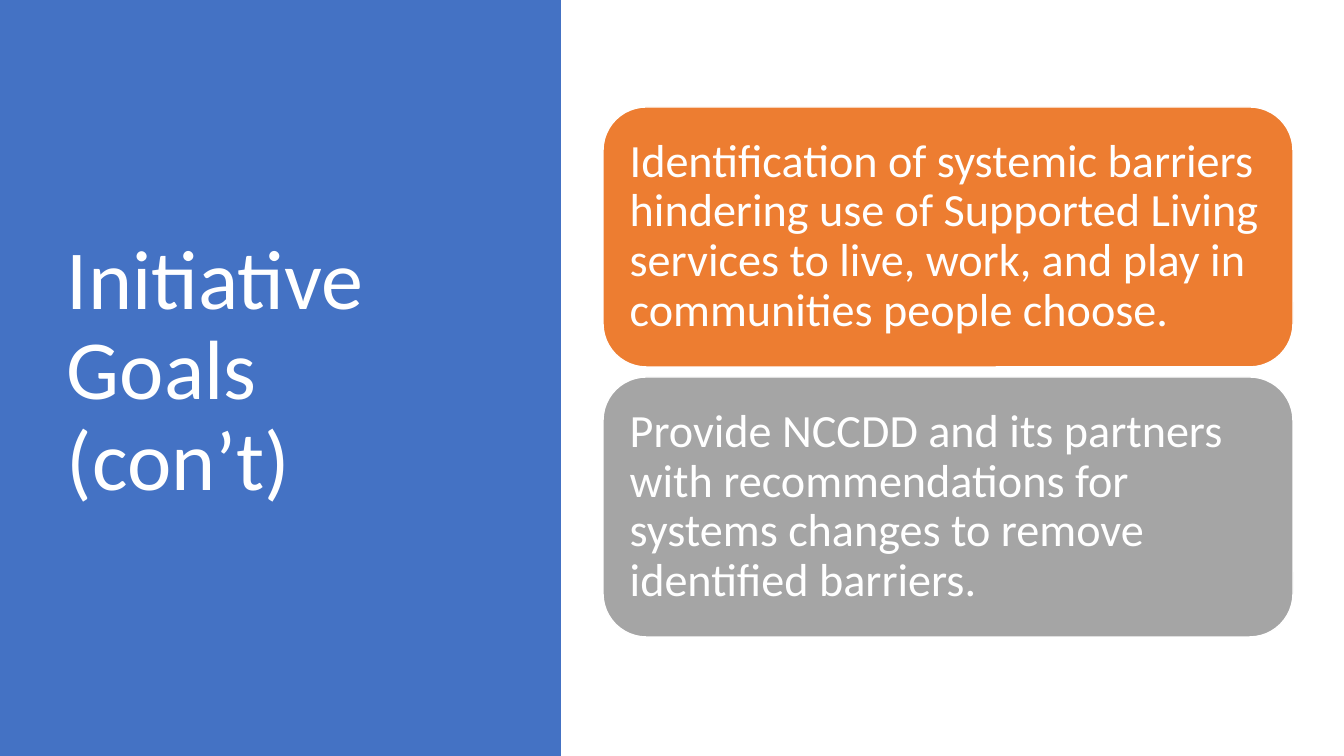
"""Build the Initiative Goals slide: a blue title panel beside two stacked goal cards."""
from pptx import Presentation
from pptx.dml.color import RGBColor
from pptx.enum.shapes import MSO_SHAPE
from pptx.enum.text import MSO_ANCHOR, PP_ALIGN
from pptx.util import Pt

RECT, ROUND = MSO_SHAPE.RECTANGLE, MSO_SHAPE.ROUNDED_RECTANGLE
MIDDLE, LEFT = MSO_ANCHOR.MIDDLE, PP_ALIGN.LEFT
PX = 914400 / 100.8
COLORS = {"blue": "4472C4", "orange": "ED7D31", "gray": "A5A5A5", "white": "FFFFFF"}


def box(*rect):
    return [round(v * PX) for v in rect]


def write(s, text, size, inset_x, inset_y):
    tf = s.text_frame
    tf.word_wrap = True
    tf.vertical_anchor = MIDDLE
    tf.margin_left = tf.margin_right = round(inset_x * PX)
    tf.margin_top = tf.margin_bottom = round(inset_y * PX)
    p = tf.paragraphs[0]
    p.alignment = LEFT
    p.line_spacing = 0.9
    r = p.add_run()
    r.text = text
    r.font.name = "Calibri"
    r.font.size = Pt(size)
    r.font.color.rgb = RGBColor.from_string(COLORS["white"])


prs = Presentation()
prs.slide_width, prs.slide_height = box(1344, 756)
slide = prs.slides.add_slide(prs.slide_layouts[6])

panel = slide.shapes.add_shape(RECT, *box(0, 0, 561, 756))
panel.shadow.inherit = False
panel.fill.solid()
panel.fill.fore_color.rgb = RGBColor.from_string(COLORS["blue"])
panel.line.fill.background()

title = slide.shapes.add_textbox(*box(57, 69, 419, 607))
write(title, "Initiative Goals (con’t)", size=60, inset_x=10, inset_y=5)

goals = [
    ("orange", "Identification of systemic barriers hindering use of Supported Living "
               "services to live, work, and play in communities people choose."),
    ("gray", "Provide NCCDD and its partners with recommendations for systems changes "
             "to remove identified barriers."),
]
for i, (color, text) in enumerate(goals):
    card = slide.shapes.add_shape(ROUND, *box(603, 107 + i * 270, 690, 260))
    card.shadow.inherit = False
    card.fill.solid()
    card.fill.fore_color.rgb = RGBColor.from_string(COLORS[color])
    card.line.color.rgb = RGBColor.from_string(COLORS["white"])
    card.line.width = Pt(1)
    write(card, text, size=33, inset_x=14, inset_y=14)

prs.save("out.pptx")
